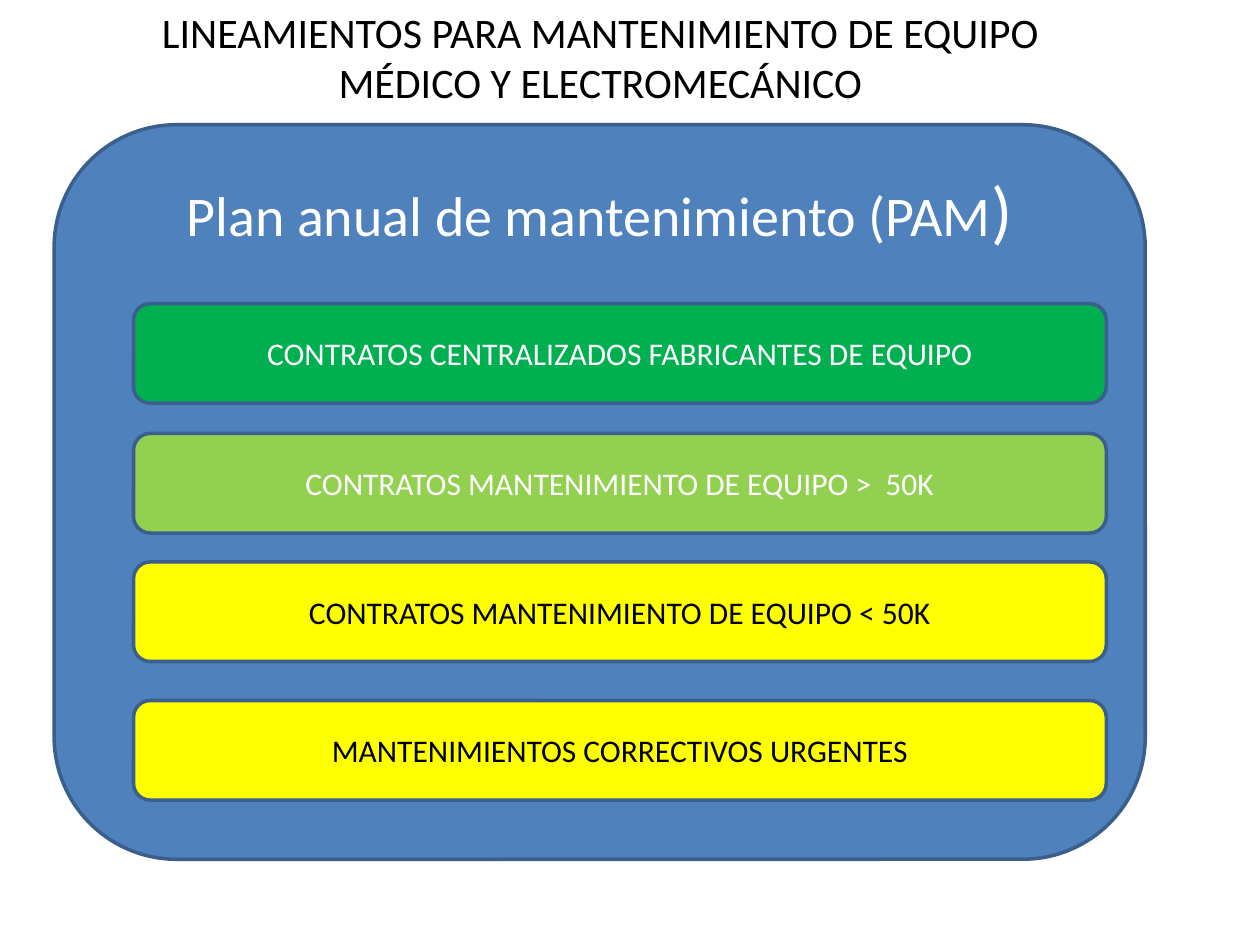
from pptx import Presentation
from pptx.dml.color import RGBColor
from pptx.enum import shapes, text
from pptx.util import Inches, Pt

FONT = "Calibri"
BLACK = RGBColor(0x00, 0x00, 0x00)
WHITE = RGBColor(0xFF, 0xFF, 0xFF)
BLUE = RGBColor(0x4F, 0x81, 0xBD)
OUTLINE = RGBColor(0x3A, 0x5F, 0x8C)
GREEN = RGBColor(0x00, 0xB0, 0x50)
LIME = RGBColor(0x92, 0xD0, 0x50)
YELLOW = RGBColor(0xFF, 0xFF, 0x00)

CONTRACTS = [
    (2.41, "CONTRATOS CENTRALIZADOS FABRICANTES DE EQUIPO", GREEN, WHITE),
    (3.44, "CONTRATOS MANTENIMIENTO DE EQUIPO >  50K", LIME, WHITE),
    (4.46, "CONTRATOS MANTENIMIENTO DE EQUIPO < 50K", YELLOW, BLACK),
    (5.56, "MANTENIMIENTOS CORRECTIVOS URGENTES", YELLOW, BLACK),
]


class PlanSlide:
    def __init__(self, prs):
        self.slide = prs.slides.add_slide(prs.slide_layouts[5])

    def set_text(self, frame, runs, color, anchor):
        """Fill a frame with one centred paragraph of (wording, size) runs."""
        frame.word_wrap = True
        frame.auto_size = text.MSO_AUTO_SIZE.NONE
        frame.vertical_anchor = anchor
        paragraph = frame.paragraphs[0]
        paragraph.alignment = text.PP_ALIGN.CENTER
        for wording, size in runs:
            run = paragraph.add_run()
            run.text = wording
            run.font.name = FONT
            run.font.size = Pt(size)
            run.font.color.rgb = color

    def title(self, left, top, width, height, wording):
        heading = self.slide.shapes.title
        heading.left, heading.top = Inches(left), Inches(top)
        heading.width, heading.height = Inches(width), Inches(height)
        self.set_text(heading.text_frame, [(wording, 24)], BLACK, text.MSO_ANCHOR.TOP)

    def rounded_box(self, left, top, width, height, fill, runs, color=WHITE,
                    anchor=text.MSO_ANCHOR.MIDDLE):
        box = self.slide.shapes.add_shape(
            shapes.MSO_SHAPE.ROUNDED_RECTANGLE,
            Inches(left), Inches(top), Inches(width), Inches(height))
        box.shadow.inherit = False
        box.fill.solid()
        box.fill.fore_color.rgb = fill
        box.line.color.rgb = OUTLINE
        box.line.width = Pt(2)
        self.set_text(box.text_frame, runs, color, anchor)


def main():
    prs = Presentation()
    prs.slide_width, prs.slide_height = Inches(10), Inches(7.5)
    plan = PlanSlide(prs)
    plan.title(0.98, 0, 7.57, 1.25,
               "LINEAMIENTOS PARA MANTENIMIENTO DE EQUIPO MÉDICO Y ELECTROMECÁNICO")
    plan.rounded_box(0.43, 0.99, 8.66, 5.83, BLUE,
                     [("Plan anual de mantenimiento (PAM", 32), (")", 40)],
                     anchor=text.MSO_ANCHOR.TOP)
    for top, wording, fill, color in CONTRACTS:
        plan.rounded_box(1.06, top, 7.72, 0.79, fill, [(wording, 18)], color)
    prs.save("out.pptx")


if __name__ == "__main__":
    main()
